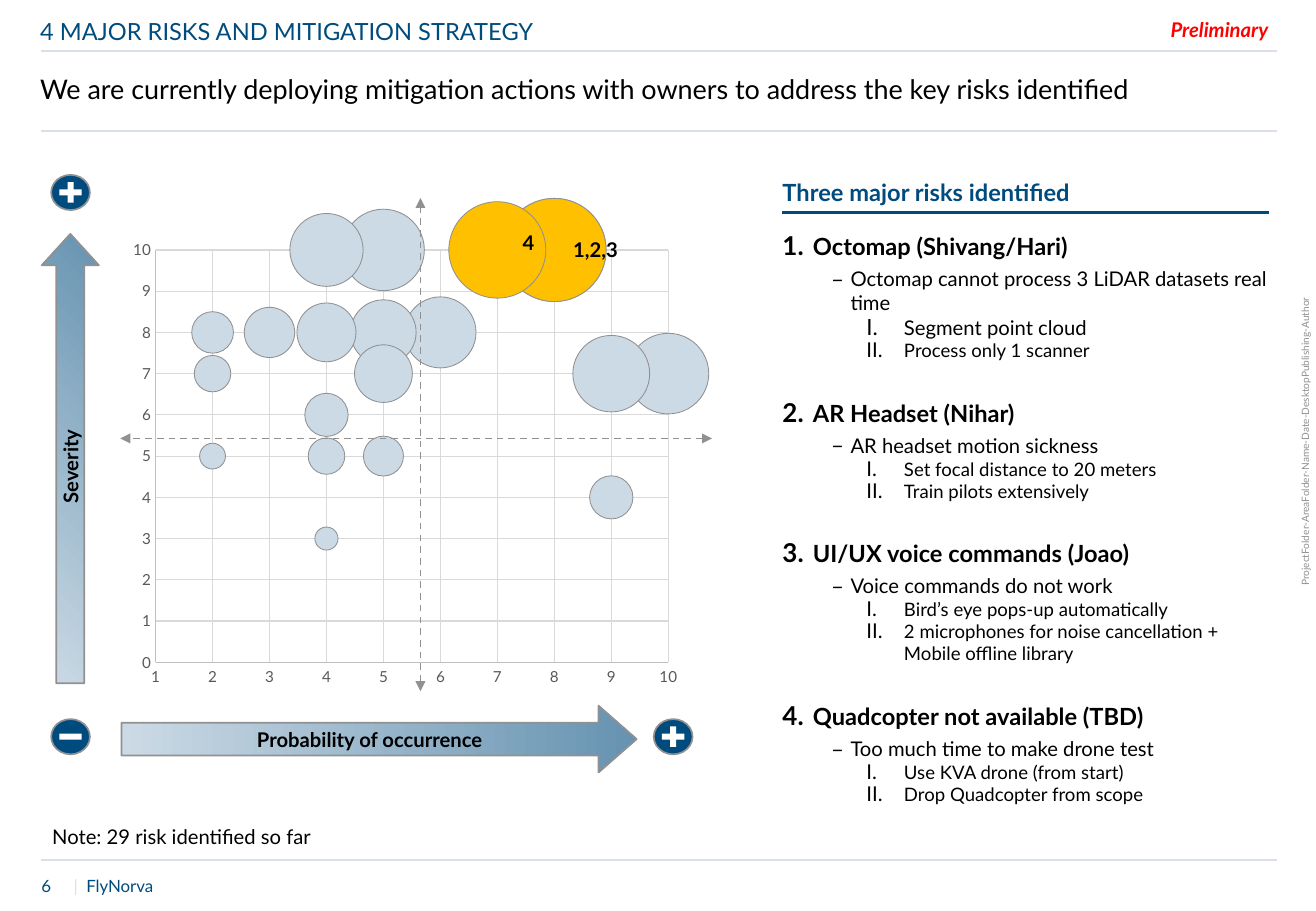
import pptx
import pptx.chart.data
import pptx.dml.color
import pptx.enum.chart
import pptx.enum.dml
import pptx.enum.shapes
import pptx.enum.text
import pptx.oxml
import pptx.oxml.ns
import pptx.util

HUES = {"navy": "004B7D", "pale": "CCDAE5", "steel": "6693B1", "gray": "919191",
        "rule": "DAE0E5", "gold": "FFC000", "black": "000000", "white": "FFFFFF",
        "red": "FF0000", "tick": "595959", "axis": "BFBFBF", "grid": "D9D9D9"}
FONT = "Lato"
Pt = pptx.util.Pt
Inch = pptx.util.Inches
SHAPE = pptx.enum.shapes.MSO_SHAPE
ALIGN = pptx.enum.text.PP_ALIGN
ANCHOR = pptx.enum.text.MSO_ANCHOR


def hue(name):
    return pptx.dml.color.RGBColor.from_string(HUES[name])


def node(tag, **attrs):
    item = pptx.oxml.parse_xml(f"<{tag} {pptx.oxml.ns.nsdecls(tag[0])}/>")
    for key, val in attrs.items():
        item.set(key, str(val))
    return item


class Page:
    """One slide; places are in percent of its width and height."""

    def __init__(self, deck):
        self.wide, self.high = deck.slide_width, deck.slide_height
        self.slide = deck.slides.add_slide(deck.slide_layouts[3])
        self.shapes = self.slide.shapes

    def col(self, n):
        return round(self.wide * n / 100)

    def row(self, n):
        return round(self.high * n / 100)

    def box(self, x, y, w, h):
        return self.col(x), self.row(y), self.col(w), self.row(h)

    def style(self, font, size, tint="black", **more):
        for key, val in {"name": FONT, "size": Pt(size), **more}.items():
            setattr(font, key, val)
        font.color.rgb = hue(tint)

    def stroke(self, line, tint, width):
        line.color.rgb = hue(tint)
        line.width = Pt(width)

    def frame(self, item, anchor=ANCHOR.TOP, wrap=True):
        frame = item.text_frame
        form = {"margin_left": 0, "margin_right": 0, "margin_top": 0, "margin_bottom": 0,
                "vertical_anchor": anchor, "word_wrap": wrap,
                "auto_size": pptx.enum.text.MSO_AUTO_SIZE.NONE}
        for key, val in form.items():
            setattr(frame, key, val)
        return frame

    def para(self, par, text, size, tint="black", align=ALIGN.LEFT, space=1, gap=0, **more):
        form = {"alignment": align, "line_spacing": space, "space_before": Pt(gap)}
        for key, val in form.items():
            setattr(par, key, val)
        run = par.add_run()
        run.text = text
        self.style(run.font, size, tint, **more)

    def text(self, spot, text, size, tint="black", anchor=ANCHOR.TOP, turn=0, **more):
        item = self.shapes.add_textbox(*self.box(*spot))
        item.rotation = turn
        self.para(self.frame(item, anchor, False).paragraphs[0], text, size, tint, **more)

    def place(self, item, spot):
        item.left, item.top, item.width, item.height = self.box(*spot)
        return item

    def head(self, item, spot, text, size, tint, space=1):
        par = self.frame(self.place(item, spot), ANCHOR.MIDDLE).paragraphs[0]
        self.para(par, text, size, tint, space=space)
        self.mark(par, 0, 0, node("a:buNone"))

    def mark(self, par, left, hang, *marks):
        props = par._p.get_or_add_pPr()
        props.set("marL", str(Inch(left)))
        props.set("indent", str(Inch(-hang)))
        for item in marks:
            props.append(item)

    def list(self, item, spot, risks):
        frame = self.frame(self.place(item, spot))
        # left edge, hanging indent
        tiers = [(0.25, 0.25), (0.56, 0.16), (1, 0.31)]
        for num, (name, cause, steps) in enumerate(risks, 1):
            lines = [(0, name, 14, 22 if num > 1 else 0), (1, cause, 12, 3.6)]
            lines += [(2, step, size, 0) for step, size in steps]
            for tier, text, size, gap in lines:
                first = num == 1 and tier == 0
                par = frame.paragraphs[0] if first else frame.add_paragraph()
                par.level = tier
                self.para(par, text, size, gap=gap, bold=tier == 0)
                sign = [node("a:buAutoNum", type="arabicPeriod", startAt=num),
                        node("a:buChar", char="–"),
                        node("a:buAutoNum", type="romanUcPeriod")][tier]
                self.mark(par, *tiers[tier], node("a:buSzPct", val=110000),
                          node("a:buFont", typeface=FONT), sign)

    def line(self, x1, y1, x2, y2, tint="rule", width=1, arrow=False):
        item = self.shapes.add_connector(
            pptx.enum.shapes.MSO_CONNECTOR.STRAIGHT,
            self.col(x1), self.row(y1), self.col(x2), self.row(y2))
        self.stroke(item.line, tint, width)
        props = item.element.spPr
        if arrow:
            item.line.dash_style = pptx.enum.dml.MSO_LINE.DASH
            for end in ("a:headEnd", "a:tailEnd"):
                props.find(pptx.oxml.ns.qn("a:ln")).append(node(end, type="triangle"))
        props.append(node("a:effectLst"))

    def shape(self, kind, spot, tint=None, edge=None):
        item = self.shapes.add_shape(kind, *self.box(*spot))
        item.shadow.inherit = False
        if tint:
            item.fill.solid()
            item.fill.fore_color.rgb = hue(tint)
        if edge:
            self.stroke(item.line, edge, 1)
        else:
            item.line.fill.background()
        return item

    def arrow(self, spot, text, tip, turn=0, slant=0):
        item = self.shape(SHAPE.RIGHT_ARROW, spot, edge="gray")
        item.rotation = turn
        item.adjustments[0], item.adjustments[1] = 0.49, tip
        item.fill.gradient()
        item.fill.gradient_angle = slant
        for stop, tint in zip(item.fill.gradient_stops, ("pale", "steel")):
            stop.color.rgb = hue(tint)
        par = self.frame(item, ANCHOR.MIDDLE, False).paragraphs[0]
        self.para(par, text, 12, align=ALIGN.CENTER, bold=True)

    def sign(self, x, y, plus=True):
        parts = [(SHAPE.OVAL, 2.95, 3.87, "navy", "gray"),
                 (SHAPE.RECTANGLE, 1.7, 0.67, "white", None)]
        if plus:
            parts.append((SHAPE.RECTANGLE, 0.46, 2.27, "white", None))
        for kind, w, h, tint, edge in parts:
            self.shape(kind, (x - w / 2, y - h / 2, w, h), tint, edge)

    def chart(self, spot, dots, gold, plot):
        data = pptx.chart.data.BubbleChartData()
        group = data.add_series("Series 1")
        for dot in dots:
            group.add_data_point(*dot)
        kind = pptx.enum.chart.XL_CHART_TYPE.BUBBLE
        chart = self.shapes.add_chart(kind, *self.box(*spot), data).chart
        chart.has_legend = chart.has_title = False
        self.style(chart.font, 10)
        # Bubbles
        group = chart.plots[0].series[0]
        for item, tint in [(group, "pale")] + [(group.points[n], "gold") for n in gold]:
            item.format.fill.solid()
            item.format.fill.fore_color.rgb = hue(tint)
            self.stroke(item.format.line, "gray", 0.5)
        # Axes
        none = pptx.enum.chart.XL_TICK_MARK.NONE
        for axis, low in ((chart.category_axis, 1), (chart.value_axis, 0)):
            form = {"minimum_scale": low, "maximum_scale": 10, "major_unit": 1,
                    "major_tick_mark": none, "minor_tick_mark": none,
                    "has_major_gridlines": True, "has_title": False}
            for key, val in form.items():
                setattr(axis, key, val)
            self.style(axis.tick_labels.font, 9, "tick")
            self.stroke(axis.format.line, "axis", 0.75)
            self.stroke(axis.major_gridlines.format.line, "grid", 0.75)
        # Inner plot area
        area = chart.element.chart.plotArea
        for old in area.findall(pptx.oxml.ns.qn("c:layout")):
            area.remove(old)
        layout, inner = node("c:layout"), node("c:manualLayout")
        parts = {"layoutTarget": "inner", "xMode": "edge", "yMode": "edge", **plot}
        for key, val in parts.items():
            inner.append(node("c:" + key, val=val))
        layout.append(inner)
        area.insert(0, layout)


# x, y, size of each risk
DOTS = ([(8, 10, 8)] * 3 + [(7, 10, 7)] + [(5, 10, 5)] * 5 + [(10, 7, 4.9), (9, 7, 4.4)]
        + [(4, 10, 4)] * 3 + [(6, 8, 3.8), (5, 8, 3.2), (5, 8, 3.2), (4, 8, 2.6), (5, 7, 2.5),
        (3, 8, 1.9), (9, 4, 1.4), (4, 6, 1.4), (2, 8, 1.3), (2, 8, 1.3), (5, 5, 1.2),
        (4, 5, 1), (2, 7, 1), (2, 5, 0.5), (4, 3, 0.4)])
RISKS = [
    ("Octomap (Shivang/Hari)", "Octomap cannot process 3 LiDAR datasets real time",
     [("Segment point cloud", 12), ("Process only 1 scanner", 11)]),
    ("AR Headset (Nihar)", "AR headset motion sickness",
     [("Set focal distance to 20 meters", 11), ("Train pilots extensively", 11)]),
    ("UI/UX voice commands (Joao)", "Voice commands do not work",
     [("Bird’s eye pops-up automatically", 11),
      ("2 microphones for noise cancellation + Mobile offline library", 11)]),
    ("Quadcopter not available (TBD)", "Too much time to make drone test",
     [("Use KVA drone (from start)", 11), ("Drop Quadcopter from scope", 11)])]


def main():
    deck = pptx.Presentation()
    deck.slide_width, deck.slide_height = Inch(10.83), Inch(7.5)
    page = Page(deck)
    title, crumb, body = page.slide.placeholders

    # Page frame
    for y in (5.6, 14.4, 94.4):
        page.line(3.14, y, 97.05, y)
    page.text((87.26, 47.2, 23.92, 2.53),
              "ProjectFolder-AreaFolder-Name-Date-DesktopPublishing-Author", 6, "gray",
              ANCHOR.MIDDLE, 270, align=ALIGN.CENTER, space=0.9)
    for x, text, tint in ((3.14, "6", "navy"), (5.6, "|", "rule"), (6.56, "FlyNorva", "navy")):
        page.text((x, 96.4, 6, 2), text, 10, tint, space=0.9)

    # Headings
    page.head(crumb, (3.05, 1.2, 93.91, 4.4), "4 MAJOR RISKS AND MITIGATION STRATEGY", 14, "navy")
    page.head(title, (3.05, 7.87, 93.91, 4.27), "We are currently deploying mitigation actions "
              "with owners to address the key risks identified", 16, "black", 0.9)
    page.text((88.37, 1.87, 8.59, 2.67), "Preliminary", 12, "red",
              align=ALIGN.CENTER, bold=True, italic=True)

    # Risk map
    page.arrow((9.23, 77.47, 39.15, 7.33), "Probability of occurrence", 0.57)
    page.arrow((-11.73, 47.2, 34.16, 6.27), "Severity", 0.55, 270, 315)
    page.sign(51.15, 80.87)
    page.sign(5.36, 21.13)
    page.sign(5.36, 80.87, plus=False)
    page.chart((9.14, 21.73, 44.78, 54.8), DOTS, (2, 3),
               {"x": 0.06, "y": 0.1, "w": 0.87, "h": 0.83})
    page.line(31.95, 75.87, 31.95, 21.73, "gray", arrow=True)
    page.line(54.11, 48.13, 9.14, 48.13, "gray", arrow=True)
    for spot, text in (((43.31, 26, 3.88, 2.67), "1,2,3"), ((39.7, 25.33, 0.92, 2.67), "4")):
        page.text(spot, text, 12, align=ALIGN.CENTER, bold=True)
    page.text((3.97, 90.53, 20.41, 2.67), "Note: 29 risk identified so far", 12)

    # Risk list
    page.text((59.46, 19.07, 36.93, 3.6), "Three major risks identified", 14, "navy",
              ANCHOR.BOTTOM, space=0.9, bold=True)
    page.line(59.46, 23.33, 96.4, 23.33, "navy", 1.5)
    page.list(body, (59.46, 25.47, 36.93, 65.07), RISKS)
    deck.save("out.pptx")


if __name__ == "__main__":
    main()
